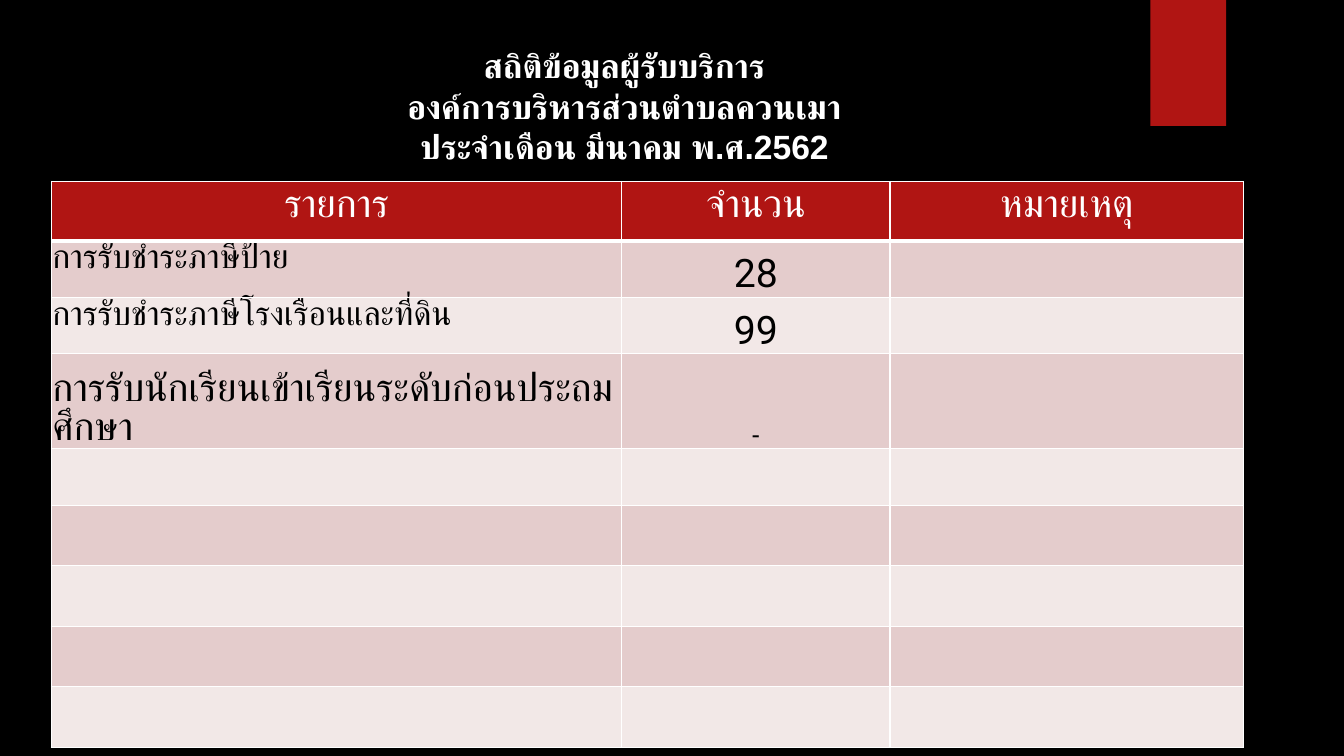
from dataclasses import dataclass

from lxml import etree
from pptx import Presentation
from pptx.dml.color import RGBColor
from pptx.enum.shapes import MSO_SHAPE
from pptx.enum.text import MSO_ANCHOR, PP_ALIGN
from pptx.oxml.ns import qn
from pptx.util import Pt

LEFT, CENTER = PP_ALIGN.LEFT, PP_ALIGN.CENTER
TOP, BOTTOM = MSO_ANCHOR.TOP, MSO_ANCHOR.BOTTOM
RECT = MSO_SHAPE.RECTANGLE

BLACK, WHITE, RED = "000000", "FFFFFF", "B01513"
BANDS = ("E4CCCC", "F2E8E7")

TITLE = [
    "สถิติข้อมูลผู้รับบริการ",
    "องค์การบริหารส่วนตำบลควนเมา",
    "ประจำเดือน มีนาคม พ.ศ.2562",
]
HEADS = ["รายการ", "จำนวน", "หมายเหตุ"]
COLS = [407.5, 191.5, 252.7]
ROWS = [42.5] + [40.3] * 4 + [43.2] * 4


@dataclass
class Entry:
    label: str
    size: int
    anchor: MSO_ANCHOR
    count: str
    count_size: int = 28
    count_font: str = "Roboto"


ENTRIES = [
    Entry("การรับชำระภาษีป้าย", 24, TOP, "28"),
    Entry("การรับชำระภาษีโรงเรือนและที่ดิน", 24, TOP, "99"),
    Entry("การรับนักเรียนเข้าเรียนระดับก่อนประถมศึกษา", 28, BOTTOM,
          "-", 18, "Arial"),
]


def color(code: str) -> RGBColor:
    return RGBColor.from_string(code)


def paint(item, code: str) -> None:
    item.fill.solid()
    item.fill.fore_color.rgb = color(code)


def write(frame, lines: list[str], *, size: float, font: str, ink: str = BLACK,
          bold: bool = False, align: PP_ALIGN = CENTER) -> None:
    for i, line in enumerate(lines):
        para = frame.paragraphs[0] if i == 0 else frame.add_paragraph()
        para.alignment = align
        run = para.add_run()
        run.text = line
        run.font.size = Pt(size)
        run.font.name = font
        run.font.bold = bold
        run.font.color.rgb = color(ink)


def edge(cell, low: float = 1) -> None:
    """Draw white borders, with the bottom one of width low."""
    props = cell._tc.get_or_add_tcPr()
    widths = {"lnL": 1, "lnR": 1, "lnT": 1, "lnB": low}
    for i, (side, width) in enumerate(widths.items()):
        line = etree.Element(qn(f"a:{side}"), w=str(Pt(width)))
        fill = etree.SubElement(line, qn("a:solidFill"))
        etree.SubElement(fill, qn("a:srgbClr"), val=WHITE)
        props.insert(i, line)


def tighten(cell, anchor: MSO_ANCHOR) -> None:
    cell.margin_left = cell.margin_right = cell.margin_top = Pt(0.7)
    cell.margin_bottom = Pt(0)
    cell.vertical_anchor = anchor


def build_table(slide) -> None:
    table = slide.shapes.add_table(len(ROWS), len(COLS), Pt(36.7), Pt(129.6),
                                   Pt(sum(COLS)), Pt(sum(ROWS))).table
    for col, width in zip(table.columns, COLS):
        col.width = Pt(width)
    for row, height in zip(table.rows, ROWS):
        row.height = Pt(height)

    # Fills and borders
    for r in range(len(ROWS)):
        for c in range(len(COLS)):
            cell = table.cell(r, c)
            paint(cell, BANDS[(r - 1) % 2] if r else RED)
            edge(cell, 1 if r else 3)

    # Header row
    for c, head in enumerate(HEADS):
        write(table.cell(0, c).text_frame, [head], size=28,
              font="League Spartan", ink=WHITE)

    # Service entries
    for r, entry in enumerate(ENTRIES, 1):
        label, count = table.cell(r, 0), table.cell(r, 1)
        tighten(label, entry.anchor)
        tighten(count, BOTTOM)
        write(label.text_frame, [entry.label], size=entry.size,
              font="Roboto", align=LEFT)
        write(count.text_frame, [entry.count], size=entry.count_size,
              font=entry.count_font)


def main() -> None:
    deck = Presentation()
    deck.slide_width, deck.slide_height = Pt(960), Pt(540)
    slide = deck.slides.add_slide(deck.slide_layouts[6])
    paint(slide.background, BLACK)

    # Red tab at the top edge
    tab = slide.shapes.add_shape(RECT, Pt(821.8), Pt(0), Pt(54), Pt(90))
    tab.shadow.inherit = False
    paint(tab, RED)
    tab.line.fill.background()

    # Title
    box = slide.shapes.add_textbox(Pt(199.4), Pt(28.8), Pt(493.2), Pt(94.3))
    box.text_frame.word_wrap = True
    write(box.text_frame, TITLE, size=24, font="Arial", ink=WHITE, bold=True)

    build_table(slide)
    deck.save("out.pptx")


if __name__ == "__main__":
    main()
